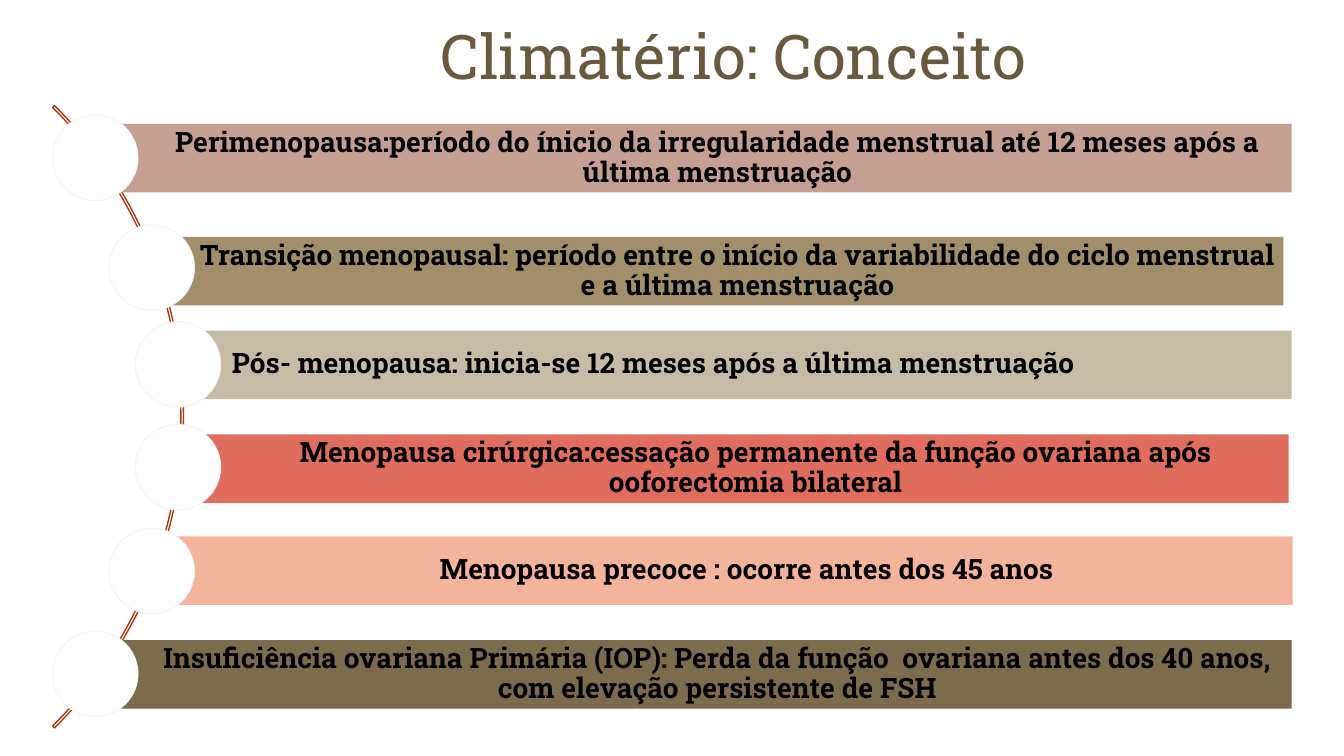
from dataclasses import dataclass
from typing import NamedTuple

from pptx import Presentation
from pptx.dml.color import RGBColor
from pptx.enum.shapes import MSO_SHAPE as Preset
from pptx.enum.text import MSO_ANCHOR as Anchor, PP_ALIGN as Align
from pptx.util import Pt

EMU_PER_PX = 9144


@dataclass(frozen=True)
class Theme:
    font: str = "Roboto Slab"
    title_color: str = "69593D"
    text_color: str = "000000"
    arc_color: str = "A93A12"
    disc_fill: str = "FDFDFD"
    disc_line: str = "F2F2F2"
    title_size: int = 44
    bar_size: int = 20
    arc_width: float = 1
    disc_width: float = 0.5


class Box(NamedTuple):
    left: int
    top: int
    width: int
    height: int

    def inner(self, left, top, width, height):
        return Box(self.left + left, self.top + top, width, height)


class Stage(NamedTuple):
    text: str
    color: str
    bar: tuple
    disc: tuple
    align: Align = Align.CENTER


THEME = Theme()
TITLE_BOX = Box(164, 13, 1127, 84)
LIST_BOX = Box(52, 104, 1230, 617)
ARC = (-743, -127, 873, 873)
ARC_ADJUSTMENTS = (189, 27, 0.003)
BAR_HEIGHT = 68
DISC_SIZE = 85
STAGES = [
    Stage("Perimenopausa:período do ínicio da irregularidade menstrual até 12 meses "
          "após a última menstruação", "C49F92", (42, 19, 1187), (0, 10)),
    Stage("Transição menopausal: período entre o início da variabilidade do ciclo "
          "menstrual e a última menstruação", "A28E6A", (90, 131, 1131), (56, 119)),
    Stage("Pós- menopausa: inicia-se 12 meses após a última menstruação",
          "C7BBA6", (124, 224, 1105), (82, 215), Align.LEFT),
    Stage("Menopausa cirúrgica:cessação permanente da função ovariana após "
          "ooforectomia bilateral", "DF6C5D", (121, 327, 1105), (82, 317)),
    Stage("Menopausa precoce : ocorre antes dos 45 anos",
          "F4B39B", (99, 428, 1131), (56, 420)),
    Stage("Insuficiência ovariana Primária (IOP): Perda da função  ovariana antes "
          "dos 40 anos, com elevação persistente de FSH",
          "7C6B4D", (42, 531, 1187), (0, 522)),
]


def px(length):
    return length * EMU_PER_PX


def place(box):
    return [px(length) for length in box]


def add_span(para, text, size, color, bold=False):
    span = para.add_run()
    span.text = text
    span.font.name = THEME.font
    span.font.size = Pt(size)
    span.font.bold = bold
    span.font.color.rgb = RGBColor.from_string(color)


def add_preset(page, preset, box, fill=None, line=None, width=1):
    shape = page.shapes.add_shape(preset, *place(box))
    shape.shadow.inherit = False
    if fill:
        shape.fill.solid()
        shape.fill.fore_color.rgb = RGBColor.from_string(fill)
    else:
        shape.fill.background()
    if line:
        shape.line.color.rgb = RGBColor.from_string(line)
        shape.line.width = Pt(width)
    else:
        shape.line.fill.background()
    return shape


def add_title(page, box):
    frame = page.shapes.add_textbox(*place(box)).text_frame
    frame.word_wrap = True
    para = frame.paragraphs[0]
    para.alignment = Align.CENTER
    add_span(para, "Climatério: Conceito", THEME.title_size, THEME.title_color)


def add_stage(page, box, stage):
    left, top, width = stage.bar
    bar = add_preset(page, Preset.RECTANGLE,
                     box.inner(left, top, width, BAR_HEIGHT), stage.color)
    frame = bar.text_frame
    frame.word_wrap = True
    frame.vertical_anchor = Anchor.MIDDLE
    frame.margin_left = px(54)
    frame.margin_top = frame.margin_right = frame.margin_bottom = px(6)
    para = frame.paragraphs[0]
    para.alignment = stage.align
    para.line_spacing = 0.9
    add_span(para, stage.text, THEME.bar_size, THEME.text_color, bold=True)
    add_preset(page, Preset.OVAL, box.inner(*stage.disc, DISC_SIZE, DISC_SIZE),
               THEME.disc_fill, THEME.disc_line, THEME.disc_width)


def add_stage_list(page, box):
    arc = add_preset(page, Preset.BLOCK_ARC, box.inner(*ARC),
                     line=THEME.arc_color, width=THEME.arc_width)
    for index, value in enumerate(ARC_ADJUSTMENTS):
        arc.adjustments[index] = value
    for stage in STAGES:
        add_stage(page, box, stage)


def main():
    deck = Presentation()
    deck.slide_width, deck.slide_height = px(1333), px(750)
    page = deck.slides.add_slide(deck.slide_layouts[6])
    add_title(page, TITLE_BOX)
    add_stage_list(page, LIST_BOX)
    deck.save("out.pptx")


if __name__ == "__main__":
    main()
